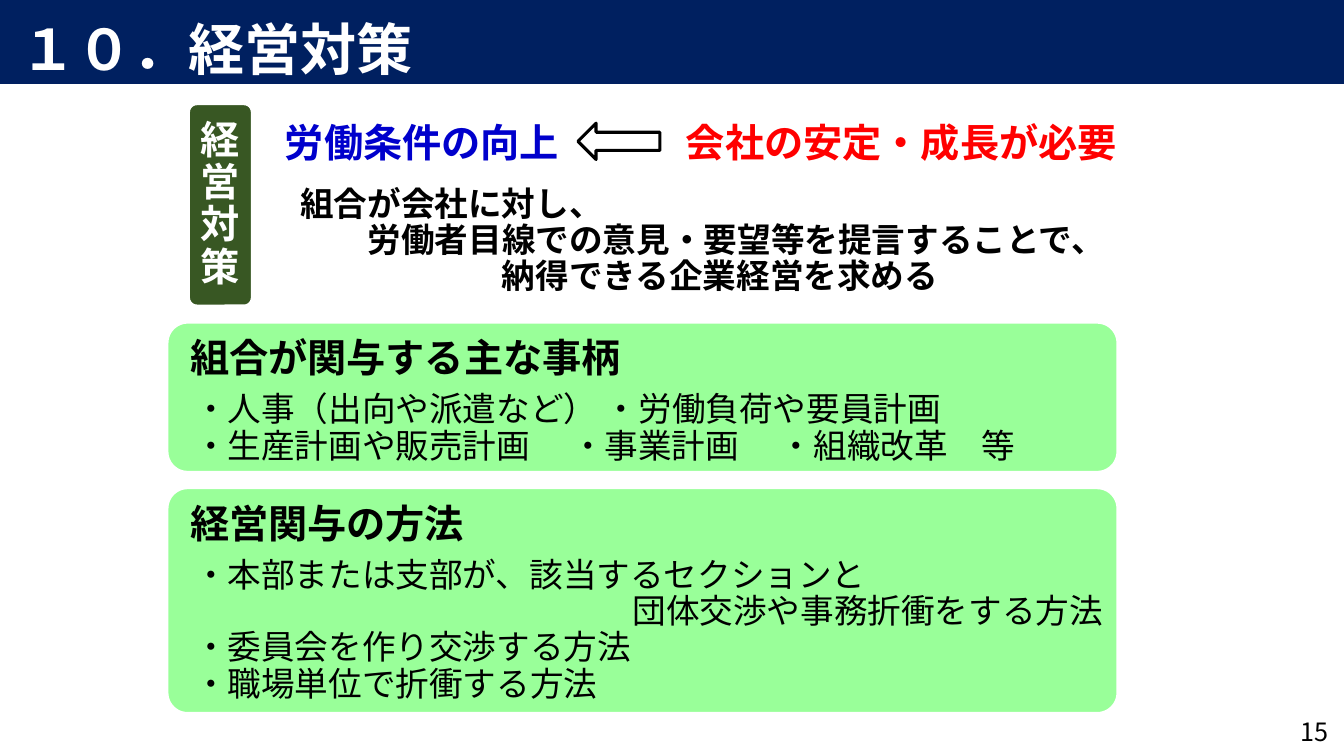
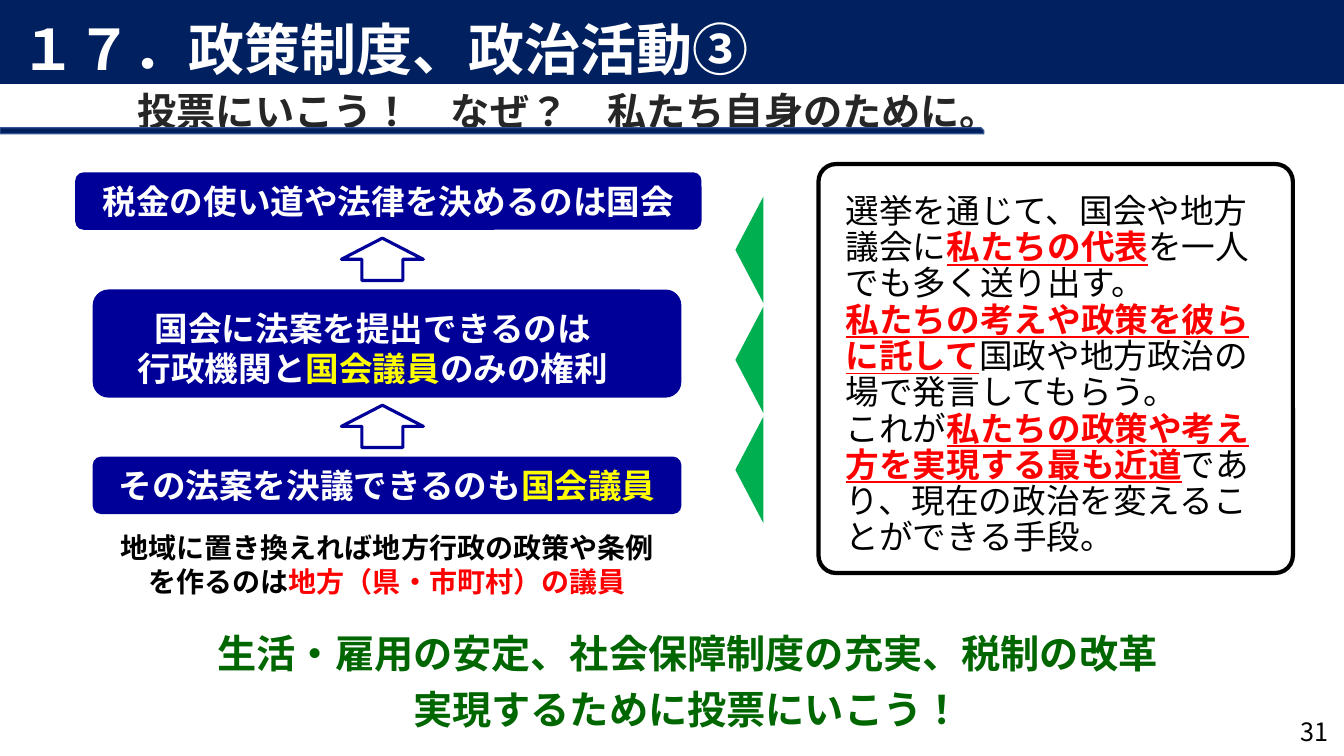
from dataclasses import dataclass, field

from lxml import etree
from pptx import Presentation
from pptx.dml.color import RGBColor
from pptx.enum.lang import MSO_LANGUAGE_ID
from pptx.enum.shapes import MSO_SHAPE
from pptx.enum.text import MSO_ANCHOR, MSO_AUTO_SIZE, PP_ALIGN
from pptx.oxml.ns import qn
from pptx.util import Inches, Pt

RECT = MSO_SHAPE.RECTANGLE
ROUNDED = MSO_SHAPE.ROUNDED_RECTANGLE
SNIPPED = MSO_SHAPE.SNIP_1_RECTANGLE
TRIANGLE = MSO_SHAPE.ISOSCELES_TRIANGLE
LEFT_ARROW = MSO_SHAPE.LEFT_ARROW
UP_ARROW = MSO_SHAPE.UP_ARROW
LEFT, CENTER, RIGHT = PP_ALIGN.LEFT, PP_ALIGN.CENTER, PP_ALIGN.RIGHT
TOP, MIDDLE = MSO_ANCHOR.TOP, MSO_ANCHOR.MIDDLE
NO_AUTOFIT = MSO_AUTO_SIZE.NONE
JAPANESE = MSO_LANGUAGE_ID.JAPANESE

SLIDE_W, SLIDE_H = Inches(13.33), Inches(7.5)
TITLE_ONLY = 5
FONT = "Noto Sans CJK JP"
TIGHT = 0.9

NAVY, WHITE, BLACK = "002060", "FFFFFF", "000000"
BLUE, DEEP_BLUE, RED, YELLOW = "0000CC", "000099", "FF0000", "FFFF00"
MINT, OLIVE, GREEN, DARK_GREEN = "99FF99", "385723", "00B050", "006600"
CHARCOAL, STRIP_EDGE = "262626", "325491"

FRAME = {
    "word_wrap": True,
    "auto_size": NO_AUTOFIT,
    "vertical_anchor": TOP,
    "margin_left": Inches(0.1),
    "margin_right": Inches(0.1),
    "margin_top": Inches(0.05),
    "margin_bottom": Inches(0.05),
}
CENTERED_FRAME = {"vertical_anchor": MIDDLE}
PARAGRAPH = {"alignment": LEFT, "line_spacing": 1.0, "space_before": Pt(0)}
TIGHT_LEFT = {"line_spacing": TIGHT}
TIGHT_CENTER = {"line_spacing": TIGHT, "alignment": CENTER}
EMPHASIS = {"color": RED, "bold": True, "underline": True}
HIGHLIGHT = {"color": YELLOW}


@dataclass
class Line:
    runs: list
    values: dict = field(default_factory=dict)
    indent: float = 0
    tabs: tuple = ()


def color(hex_string):
    return RGBColor.from_string(hex_string)


def apply(target, values):
    for name, value in values.items():
        setattr(target, name, value)


def share(left, top, width, height):
    return (int(SLIDE_W * left / 100), int(SLIDE_H * top / 100),
            int(SLIDE_W * width / 100), int(SLIDE_H * height / 100))


def font(size, hex_string, bold=True):
    return {"size": Pt(size), "color": hex_string, "bold": bold}


def format_run(run, values):
    values = dict(values)
    run.font.color.rgb = color(values.pop("color"))
    apply(run.font, {"name": FONT, "language_id": JAPANESE} | values)
    east_asian = etree.SubElement(run.font._element, qn("a:ea"))
    east_asian.set("typeface", FONT)


def indent_line(paragraph, line):
    properties = paragraph._p.get_or_add_pPr()
    if line.indent:
        properties.set("marL", str(Inches(line.indent)))
    if line.tabs:
        stops = etree.SubElement(properties, qn("a:tabLst"))
        for position in line.tabs:
            etree.SubElement(stops, qn("a:tab"), pos=str(Inches(position)), algn="l")


def write(text_frame, lines, face, values=None, frame=None):
    apply(text_frame, FRAME | (frame or {}))
    for number, line in enumerate(lines):
        if isinstance(line, str):
            line = Line([line])
        paragraph = text_frame.add_paragraph() if number else text_frame.paragraphs[0]
        apply(paragraph, PARAGRAPH | (values or {}) | line.values)
        indent_line(paragraph, line)
        for part in line.runs:
            words, changes = (part, {}) if isinstance(part, str) else part
            run = paragraph.add_run()
            run.text = words
            format_run(run, face | changes)


def add_text(slide, place, lines, face, values=None, frame=None):
    box = slide.shapes.add_textbox(*share(*place))
    write(box.text_frame, lines, face, values, frame)


def add_block(slide, kind, place, fill=None, line=None, adjust=None, rotation=0):
    block = slide.shapes.add_shape(kind, *share(*place))
    block.shadow.inherit = False
    block.rotation = rotation
    if adjust is not None:
        block.adjustments[0] = adjust
    if fill:
        block.fill.solid()
        block.fill.fore_color.rgb = color(fill)
    else:
        block.fill.background()
    if line:
        block.line.color.rgb = color(line[0])
        block.line.width = Pt(line[1])
    else:
        block.line.fill.background()
    return block


def add_titled_slide(deck, heading, page):
    slide = deck.slides.add_slide(deck.slide_layouts[TITLE_ONLY])
    title = slide.shapes.title
    apply(title, dict(zip(("left", "top", "width", "height"), share(0.8, 1.3, 95.4, 10.3))))
    write(title.text_frame, [heading], font(40, WHITE))
    band = add_block(slide, RECT, (0, 0, 100, 11.1), NAVY)
    title._element.addprevious(band._element)
    add_text(slide, (94, 94.1, 5.6, 5.3), [page], font(18, BLACK, False),
             {"alignment": RIGHT}, CENTERED_FRAME)
    return slide


def add_topic_panel(slide, top, height, heading, items):
    add_block(slide, ROUNDED, (12.3, top, 71, height), MINT, (WHITE, 4.5), 2.95 / height)
    add_text(slide, (13.4, top + 1.8, 37.5, 7.1), [heading], font(28, BLACK), TIGHT_LEFT)
    add_text(slide, (13.7, top + 8.9, 69.1, height - 9.5), items,
             font(24, BLACK, False), TIGHT_LEFT)


def add_step(slide, place, lines, frame=None):
    step = add_block(slide, ROUNDED, place, DEEP_BLUE, adjust=0.146)
    write(step.text_frame, lines, font(24, WHITE), {"alignment": CENTER},
          CENTERED_FRAME | (frame or {}))


def build_management_slide(deck):
    slide = add_titled_slide(deck, "１０．経営対策", "15")
    add_topic_panel(slide, 42.4, 20.3, "組合が関与する主な事柄", [
        "・人事（出向や派遣など） ・労働負荷や要員計画",
        Line(["・生産計画や販売計画\t・事業計画\t・組織改革　等"], tabs=(3.74, 5.81)),
    ])
    add_topic_panel(slide, 64.3, 30.3, "経営関与の方法", [
        "・本部または支部が、該当するセクションと",
        Line(["団体交渉や事務折衝をする方法"], {"alignment": RIGHT}),
        "・委員会を作り交渉する方法",
        "・職場単位で折衝する方法",
    ])
    add_text(slide, (18.1, 15.7, 26.6, 7.1), ["労働条件の向上"], font(28, BLUE), TIGHT_CENTER)
    add_block(slide, LEFT_ARROW, (43, 16.3, 6.1, 4.8), line=(BLACK, 2.25))
    add_text(slide, (50.3, 15.7, 36.2, 7.1), ["会社の安定・成長が必要"],
             font(28, RED), TIGHT_LEFT)
    add_text(slide, (21.6, 24.1, 66.3, 17.5), [
        "組合が会社に対し、",
        Line(["労働者目線での意見・要望等を提言することで、"], indent=0.67),
        Line(["納得できる企業経営を求める"], indent=2),
    ], font(24, BLACK), TIGHT_LEFT)
    tag = add_block(slide, ROUNDED, (13.9, 13.5, 5, 27.2), OLIVE, (WHITE, 4.5), 0.149)
    write(tag.text_frame, ["経営対策"], font(28, WHITE), TIGHT_CENTER, CENTERED_FRAME)


def build_voting_slide(deck):
    slide = add_titled_slide(deck, "１７．政策制度、政治活動③", "31")
    add_text(slide, (9.5, 10.9, 88, 7.6),
             ["投票にいこう！　なぜ？　私たち自身のために。"], font(28, CHARCOAL))
    add_block(slide, SNIPPED, (0, 16.9, 73.2, 0.8), NAVY, (STRIP_EDGE, 1), 0.5)

    add_step(slide, (5.6, 22.8, 46.6, 7.6), ["税金の使い道や法律を決めるのは国会"])
    add_step(slide, (6.9, 38.3, 43.8, 14.3), [
        "国会に法案を提出できるのは",
        Line(["行政機関と", ("国会議員", HIGHLIGHT), "のみの権利"]),
    ], {"margin_right": Inches(0.38), "margin_top": Inches(0.14)})
    add_step(slide, (6.9, 60.4, 43.8, 7.6),
             [Line(["その法案を決議できるのも", ("国会議員", HIGHLIGHT)])])
    for top in (31.5, 53.6):
        add_block(slide, UP_ARROW, (25.4, top, 6.1, 5.6), WHITE, (DEEP_BLUE, 2.25))
    add_text(slide, (8.1, 69.5, 41.4, 10.8), [
        Line(["地域に置き換えれば地方行政の政策や条例を作るのは",
              ("地方（県・市町村）の議員", {"color": RED})]),
    ], font(20, BLACK), {"alignment": CENTER})

    for row in range(3):
        add_block(slide, TRIANGLE, (51.8, 31.2 + 14.55 * row, 7.9, 3.7), GREEN, rotation=270)
    message = add_block(slide, ROUNDED, (60.9, 21.7, 35.3, 54.1), WHITE, (BLACK, 3), 0.043)
    write(message.text_frame, [
        Line(["選挙を通じて、国会や地方議会に", ("私たちの代表", EMPHASIS),
              "を一人でも多く送り出す。"]),
        Line([("私たちの考えや政策を彼らに託して", EMPHASIS),
              "国政や地方政治の場で発言してもらう。"]),
        Line(["これが", ("私たちの政策や考え方を実現する最も近道", EMPHASIS),
              "であり、現在の政治を変えることができる手段。"]),
    ], font(24, BLACK, False), TIGHT_LEFT, {
        "margin_left": Inches(0.22),
        "margin_right": Inches(0.25),
        "margin_top": Inches(0.25),
    })
    add_text(slide, (4.8, 83.3, 92.7, 14.9), [
        "生活・雇用の安定、社会保障制度の充実、税制の改革",
        "実現するために投票にいこう！",
    ], font(28, DARK_GREEN), TIGHT_CENTER | {"space_before": Pt(10)})


def main():
    deck = Presentation()
    apply(deck, {"slide_width": SLIDE_W, "slide_height": SLIDE_H})
    build_management_slide(deck)
    build_voting_slide(deck)
    deck.save("out.pptx")


if __name__ == "__main__":
    main()
